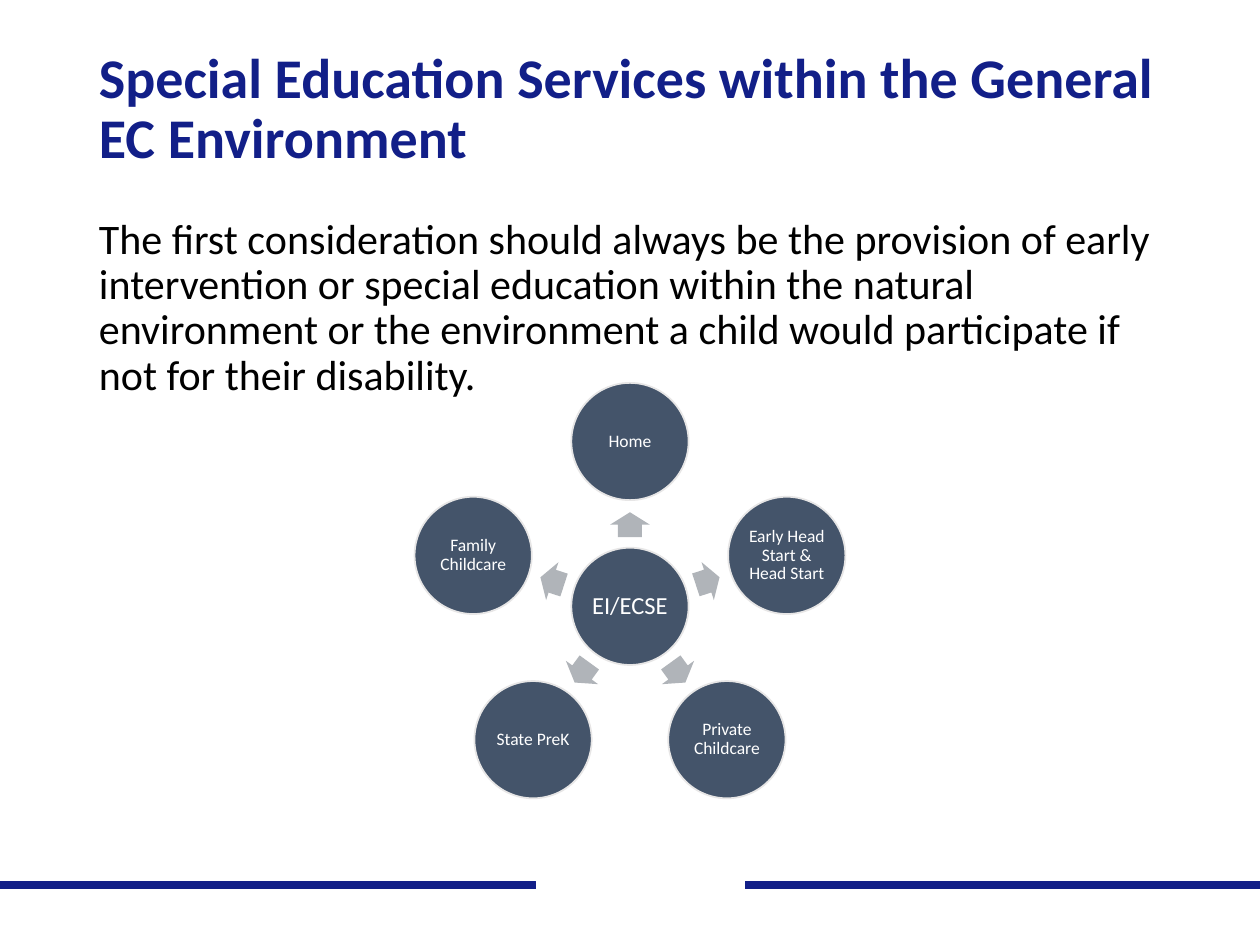
import math

from lxml import etree
from pptx import Presentation
from pptx import util as u
from pptx.dml.color import RGBColor
from pptx.enum import shapes, text
from pptx.oxml.ns import qn

Pt = u.Pt
NAVY, SLATE, GREY, PALE = "121F88", "44546A", "B0B4B9", "E7E6E6"
WHITE, BLACK = "FFFFFF", "000000"
SETTINGS = ["Home", "Early Head Start & Head Start", "Private Childcare",
            "State PreK", "Family Childcare"]


def rgb(value):
    return RGBColor.from_string(value)


def write(sp, words, size, color, bold=False, align=text.PP_ALIGN.LEFT,
          anchor=text.MSO_ANCHOR.TOP, insets=(7.2, 3.6, 7.2, 3.6)):
    tf = sp.text_frame
    tf.word_wrap = True
    tf.vertical_anchor = anchor
    (tf.margin_left, tf.margin_top,
     tf.margin_right, tf.margin_bottom) = map(Pt, insets)
    p = tf.paragraphs[0]
    p.text = words
    p.alignment = align
    p.line_spacing = 0.9
    p.font.name = "Calibri"
    p.font.size = Pt(size)
    p.font.bold = bold
    p.font.color.rgb = rgb(color)


def add_text(s, box, words, size, color, **style):
    write(s.shapes.add_textbox(*map(Pt, box)), words, size, color, **style)


def add_preset(s, kind, cx, cy, w, h, fill):
    sp = s.shapes.add_shape(kind, *map(Pt, (cx - w / 2, cy - h / 2, w, h)))
    sp.shadow.inherit = False
    sp.fill.solid()
    sp.fill.fore_color.rgb = rgb(fill)
    return sp


def add_circle(s, cx, cy, d, words, size):
    sp = add_preset(s, shapes.MSO_SHAPE.OVAL, cx, cy, d, d, SLATE)
    sp.line.color.rgb = rgb(PALE)
    sp.line.width = Pt(1)
    write(sp, words, size, WHITE, align=text.PP_ALIGN.CENTER,
          anchor=text.MSO_ANCHOR.MIDDLE, insets=(0.9,) * 4)


def add_arrow(s, cx, cy, angle):
    sp = add_preset(s, shapes.MSO_SHAPE.RIGHT_ARROW, cx, cy, 14.2, 22.8, GREY)
    sp.line.fill.background()
    sp.adjustments[0], sp.adjustments[1] = 0.6, 0.5
    sp.rotation = angle % 360


def add_radial(s, box):
    """Hub in the middle, settings spread evenly clockwise from the top."""
    left, top, width, d = box
    orbit, arrow_orbit = 94.2, 46.7
    cx, cy = left + width / 2, top + d / 2 + orbit
    add_circle(s, cx, cy, d, "EI/ECSE", 14)
    for i, name in enumerate(SETTINGS):
        angle = -90 + i * 360 / len(SETTINGS)
        dx, dy = math.cos(math.radians(angle)), math.sin(math.radians(angle))
        add_arrow(s, cx + arrow_orbit * dx, cy + arrow_orbit * dy, angle)
        add_circle(s, cx + orbit * dx, cy + orbit * dy, d, name, 10)


def add_footer(s, left, y, width):
    """Navy rule with a white gap in it."""
    for x1, x2, color in ((0, width, NAVY), (306, 425.5, WHITE)):
        c = s.shapes.add_connector(shapes.MSO_CONNECTOR.STRAIGHT,
                                   Pt(left + x1), Pt(y), Pt(left + x2), Pt(y))
        c.line.color.rgb = rgb(color)
        c.line.width = Pt(4.5)
        etree.SubElement(c._element.spPr, qn("a:effectLst"))


def main():
    prs = Presentation()
    prs.slide_width, prs.slide_height = Pt(720), Pt(540)
    s = prs.slides.add_slide(prs.slide_layouts[6])

    # Footer rule
    add_footer(s, 0, 505.5, 720)

    # Title and statement
    add_text(s, (49.5, 28.5, 621, 104.5),
             "Special Education Services within the General EC Environment",
             32, NAVY, bold=True, insets=(7.2, 0, 7.2, 0))
    add_text(s, (49.5, 121, 621, 342.5),
             "The first consideration should always be the provision of early "
             "intervention or special education within the natural environment "
             "or the environment a child would participate if not for their "
             "disability.", 24, BLACK)

    # Radial diagram: left, top, width, circle diameter
    add_radial(s, (237, 218.8, 246, 67))

    prs.save("out.pptx")


if __name__ == "__main__":
    main()
